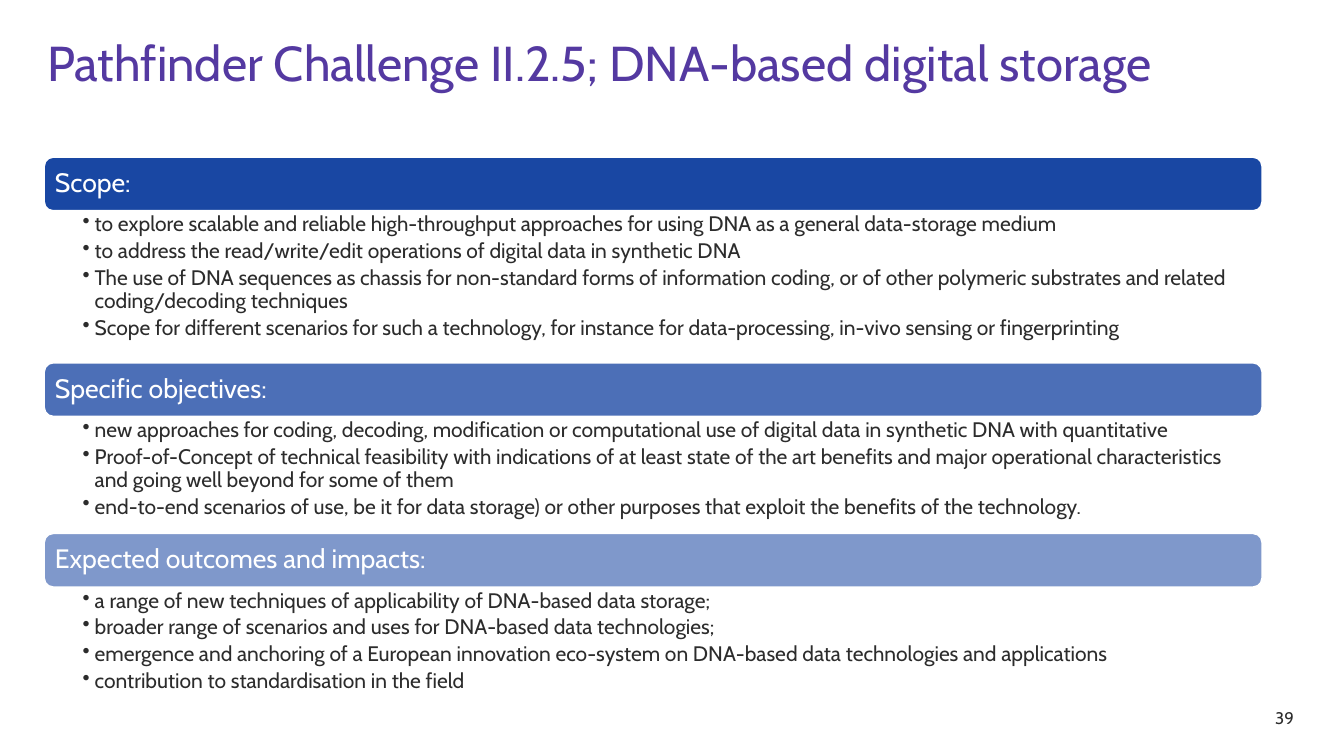
from lxml import etree
from pptx import Presentation
from pptx.dml.color import RGBColor
from pptx.enum.shapes import MSO_SHAPE as Preset
from pptx.enum.text import MSO_ANCHOR as Anchor, PP_ALIGN as Align
from pptx.oxml.ns import qn
from pptx.util import Inches, Pt

COLORS = {"title": "5439A1", "text": "2C2C2C", "bar": "003399", "white": "FFFFFF"}

# Heading, bar opacity in percent, body height in rows, bullets
SECTIONS = [
    ("Scope:", 90, 20.13, [
        "to explore scalable and reliable high-throughput approaches for using DNA as a general data-storage medium",
        "to address the read/write/edit operations of digital data in synthetic DNA",
        "The use of DNA sequences as chassis for non-standard forms of information coding, or of other polymeric "
        "substrates and related coding/decoding techniques",
        "Scope for different scenarios for such a technology, for instance for data-processing, in-vivo sensing "
        "or fingerprinting",
    ]),
    ("Specific objectives:", 70, 15.5, [
        "new approaches for coding, decoding, modification or computational use of digital data in synthetic DNA "
        "with quantitative",
        "Proof-of-Concept of technical feasibility with indications of at least state of the art benefits and major "
        "operational characteristics and going well beyond for some of them",
        "end-to-end scenarios of use, be it for data storage) or other purposes that exploit the benefits of the "
        "technology.",
    ]),
    ("Expected outcomes and impacts:", 50, 16.4, [
        "a range of new techniques of applicability of DNA-based data storage;",
        "broader range of scenarios and uses for DNA-based data technologies;",
        "emergence and anchoring of a European innovation eco-system on DNA-based data technologies and applications",
        "contribution to standardisation in the field",
    ]),
]


class SlideBuilder:
    """Places elements on a grid of 100 columns by 100 rows."""

    font_name = "Cabin"

    def __init__(self, presentation):
        self.column = presentation.slide_width / 100
        self.row = presentation.slide_height / 100
        self.slide = presentation.slides.add_slide(presentation.slide_layouts[6])

    def place(self, left, top, width, height):
        return (round(left * self.column), round(top * self.row),
                round(width * self.column), round(height * self.row))

    def fill_text(self, shape, lines, size, color, insets=(0.1, 0.05, 0.1, 0.05),
                  anchor=Anchor.TOP, spacing=0.9, after=0, bullets=False):
        frame = shape.text_frame
        frame.word_wrap = True
        frame.vertical_anchor = anchor
        (frame.margin_left, frame.margin_top,
         frame.margin_right, frame.margin_bottom) = map(Inches, insets)
        frame.text = "\n".join(lines)
        for paragraph in frame.paragraphs:
            paragraph.alignment = Align.LEFT
            paragraph.line_spacing = spacing
            paragraph.space_after = Pt(after)
            if bullets:
                self.add_bullet(paragraph)
            paragraph.font.name = self.font_name
            paragraph.font.size = Pt(size)
            paragraph.font.color.rgb = RGBColor.from_string(COLORS[color])

    def add_bullet(self, paragraph):
        properties = paragraph._p.get_or_add_pPr()
        properties.set("marL", str(Inches(0.12)))
        properties.set("indent", str(-Inches(0.12)))
        etree.SubElement(properties, qn("a:buChar")).set("char", "•")

    def text(self, box, lines, size, color, **style):
        shape = self.slide.shapes.add_textbox(*self.place(*box))
        self.fill_text(shape, lines, size, color, **style)

    def bar(self, box, heading, opacity):
        shape = self.slide.shapes.add_shape(Preset.ROUNDED_RECTANGLE, *self.place(*box))
        shape.shadow.inherit = False
        shape.fill.solid()
        shape.fill.fore_color.rgb = RGBColor.from_string(COLORS["bar"])
        fill_color = shape._element.spPr.find(qn("a:solidFill"))[0]
        etree.SubElement(fill_color, qn("a:alpha")).set("val", str(opacity * 1000))
        shape.line.color.rgb = RGBColor.from_string(COLORS["white"])
        shape.line.width = Pt(1)
        self.fill_text(shape, [heading], 19, "white", insets=(0.08,) * 4, anchor=Anchor.MIDDLE)


def main():
    presentation = Presentation()
    presentation.slide_width, presentation.slide_height = Inches(13.33), Inches(7.5)
    builder = SlideBuilder(presentation)

    # Title and page number
    builder.text((2.8, 4.5, 90.6, 12), ["Pathfinder Challenge II.2.5; DNA-based digital storage"], 35, "title")
    builder.text((94.15, 92.9, 5.5, 5.3), ["39"], 12, "text", spacing=1)

    # Stacked sections: a bar with its bullets below
    left, width, bar_height, top = 3.3, 90.6, 7.07, 20.8
    for heading, opacity, body_height, bullets in SECTIONS:
        builder.bar((left, top, width, bar_height), heading, opacity)
        top += bar_height
        builder.text((left, top, width, body_height), bullets, 15, "text",
                     insets=(0.38, 0.03, 0.15, 0.03), after=3, bullets=True)
        top += body_height

    presentation.save("out.pptx")


if __name__ == "__main__":
    main()
